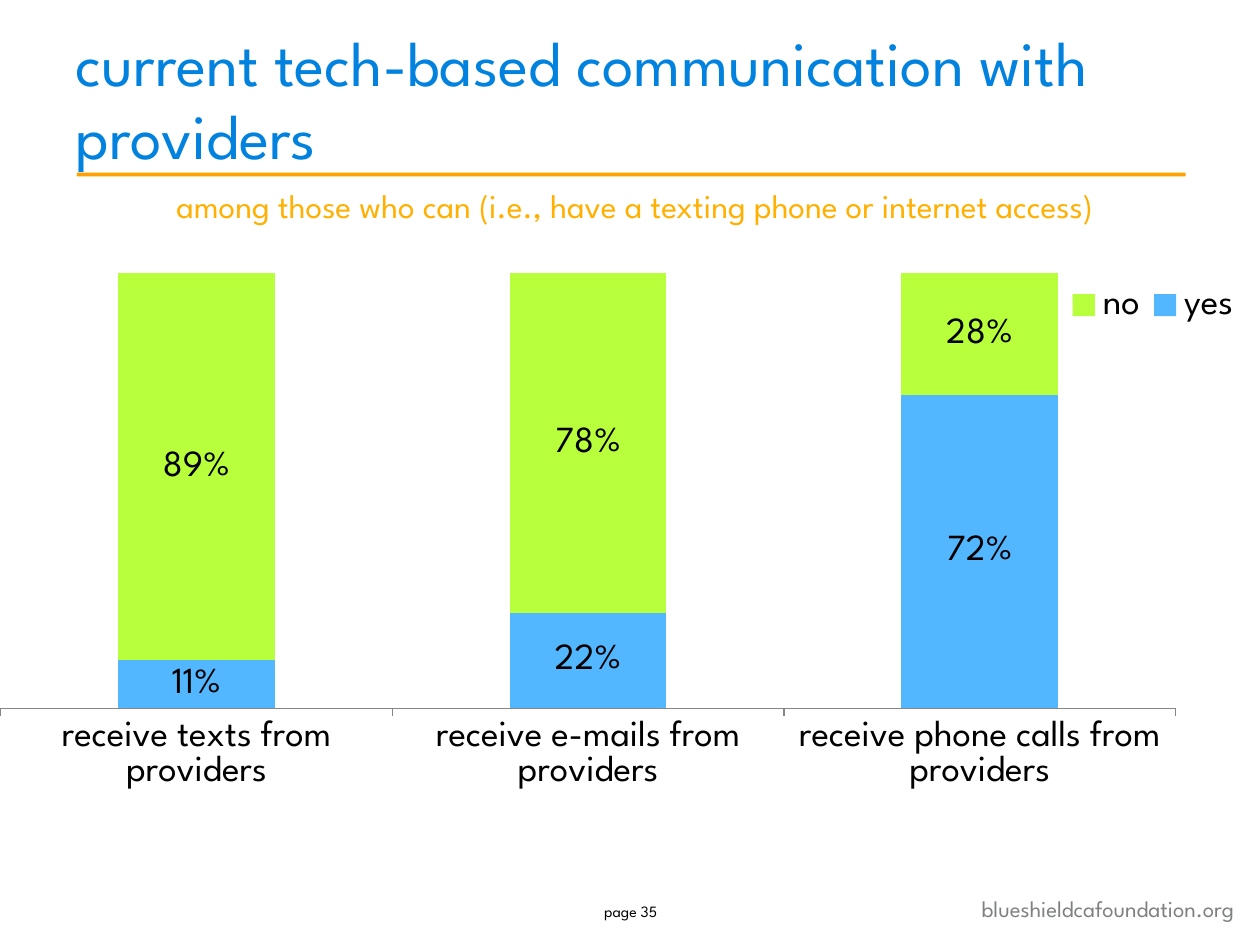
from lxml import etree
from pptx import Presentation
from pptx.chart.data import CategoryChartData
from pptx.dml.color import RGBColor
from pptx.enum.chart import XL_CHART_TYPE, XL_LABEL_POSITION, XL_LEGEND_POSITION, XL_TICK_LABEL_POSITION, XL_TICK_MARK
from pptx.enum.shapes import MSO_SHAPE
from pptx.enum.text import MSO_ANCHOR, PP_ALIGN
from pptx.oxml.ns import qn
from pptx.util import Inches, Pt

STACKED = XL_CHART_TYPE.COLUMN_STACKED
LABEL_CENTER = XL_LABEL_POSITION.CENTER
LEGEND_RIGHT = XL_LEGEND_POSITION.RIGHT
TICK_LOW = XL_TICK_LABEL_POSITION.LOW
TICK_OUT = XL_TICK_MARK.OUTSIDE
ROUND_RECT = MSO_SHAPE.ROUNDED_RECTANGLE
TOP, MIDDLE, BOTTOM = MSO_ANCHOR.TOP, MSO_ANCHOR.MIDDLE, MSO_ANCHOR.BOTTOM
LEFT, CENTER, RIGHT = PP_ALIGN.LEFT, PP_ALIGN.CENTER, PP_ALIGN.RIGHT

FONT = "League Spartan"
CATEGORIES = ["receive texts from providers", "receive e-mails from providers",
              "receive phone calls from providers"]
SERIES = [("yes", [0.11, 0.22, 0.72], "52B7FF"), ("no", [0.89, 0.78, 0.28], "B8FF3C")]


def color(value):
    """Return the colour for a hex string."""
    return RGBColor.from_string(value)


def set_font(font, size, value="000000"):
    """Apply the slide typeface, a size and a colour to a font."""
    for name, setting in {"name": FONT, "size": Pt(size), "bold": False}.items():
        setattr(font, name, setting)
    font.color.rgb = color(value)


def write_text(sp, text, size, value, align=LEFT, anchor=TOP):
    """Fill a shape with one formatted paragraph and return the paragraph."""
    tf = sp.text_frame
    for name, setting in {"word_wrap": True, "vertical_anchor": anchor}.items():
        setattr(tf, name, setting)
    p = tf.paragraphs[0]
    p.alignment = align
    r = p.add_run()
    r.text = text
    set_font(r.font, size, value)
    return p


def add_text(s, box, *args):
    """Add a text box in the given box."""
    write_text(s.shapes.add_textbox(*map(Inches, box)), *args)


def add_header(s, box):
    """Place the title in its box with the rule and subtitle below it."""
    x, y, w, h = box
    sp = s.shapes.title
    sp.left, sp.top, sp.width, sp.height = map(Inches, box)
    p = write_text(sp, "current tech-based communication with providers",
                   36, "0082DE", LEFT, BOTTOM)
    p.line_spacing = Pt(42)
    rule = s.shapes.add_shape(ROUND_RECT, *map(Inches, (x + 0.11, y + h - 0.05, 8.8, 0.03)))
    rule.shadow.inherit = False
    rule.fill.solid()
    rule.fill.fore_color.rgb = color("FFA100")
    rule.line.fill.background()
    add_text(s, (x, y + h, w + 0.08, 0.42),
             "among those who can (i.e., have a texting phone or internet access)",
             19, "FFB000", CENTER)


def set_layout(parent, index, box, inner=False):
    """Give a chart part a manual layout in fractions of the chart."""
    for old in parent.findall(qn("c:layout")):
        parent.remove(old)
    layout = etree.Element(qn("c:layout"))
    manual = etree.SubElement(layout, qn("c:manualLayout"))
    values = {"layoutTarget": "inner"} if inner else {}
    values.update(xMode="edge", yMode="edge", **dict(zip("xywh", box)))
    for name, value in values.items():
        etree.SubElement(manual, qn(f"c:{name}")).set("val", str(value))
    parent.insert(index, layout)


def add_share_chart(s, box):
    """Add the stacked column chart of yes and no shares."""
    data = CategoryChartData(number_format="0%")
    data.categories = CATEGORIES
    for name, values, _ in SERIES:
        data.add_series(name, values)
    chart = s.shapes.add_chart(STACKED, *map(Inches, box), data).chart
    set_font(chart.font, 18)
    chart.has_title = False
    plot = chart.plots[0]
    for name, setting in {"gap_width": 150, "overlap": 100, "vary_by_categories": False}.items():
        setattr(plot, name, setting)
    for series, (_, _, fill) in zip(plot.series, SERIES):
        series.format.fill.solid()
        series.format.fill.fore_color.rgb = color(fill)
        labels = series.data_labels
        for name, setting in {"show_value": True, "number_format": "0%",
                              "number_format_is_linked": False,
                              "position": LABEL_CENTER}.items():
            setattr(labels, name, setting)
        set_font(labels.font, 21)
    axis = chart.category_axis
    axis.major_tick_mark = TICK_OUT
    axis.tick_label_position = TICK_LOW
    axis.format.line.color.rgb = color("868686")
    set_font(axis.tick_labels.font, 21)
    for name, setting in {"visible": False, "has_major_gridlines": False,
                          "minimum_scale": 0, "maximum_scale": 1}.items():
        setattr(chart.value_axis, name, setting)
    chart.has_legend = True
    legend = chart.legend
    legend.position = LEGEND_RIGHT
    legend.include_in_layout = False
    set_font(legend.font, 21)
    plot_area = chart.element.find(".//" + qn("c:plotArea"))
    set_layout(plot_area, 0, (0, 0.081, 0.933, 0.668), inner=True)
    set_layout(chart.element.find(".//" + qn("c:legend")), 1, (0.84, 0.08, 0.15, 0.1))


def add_footer(s, box):
    """Place the page number and the web address along the bottom."""
    x, y, w, h = box
    add_text(s, (x + w - 2.8, y + 0.08, 2.69, 0.32),
             "blueshieldcafoundation.org", 13, "7E8082", RIGHT)
    add_text(s, (x + w / 2 - 0.44, y, 0.89, h), "page 35", 9, "000000", CENTER, MIDDLE)


def main():
    """Build and save the slide."""
    prs = Presentation()
    prs.slide_width, prs.slide_height = Inches(10), Inches(7.5)
    s = prs.slides.add_slide(prs.slide_layouts[5])
    add_header(s, (0.5, 0.25, 9, 1.17))
    add_share_chart(s, (0, 1.75, 10, 5.17))
    add_footer(s, (0, 6.97, 10, 0.52))
    prs.save("out.pptx")


if __name__ == "__main__":
    main()
